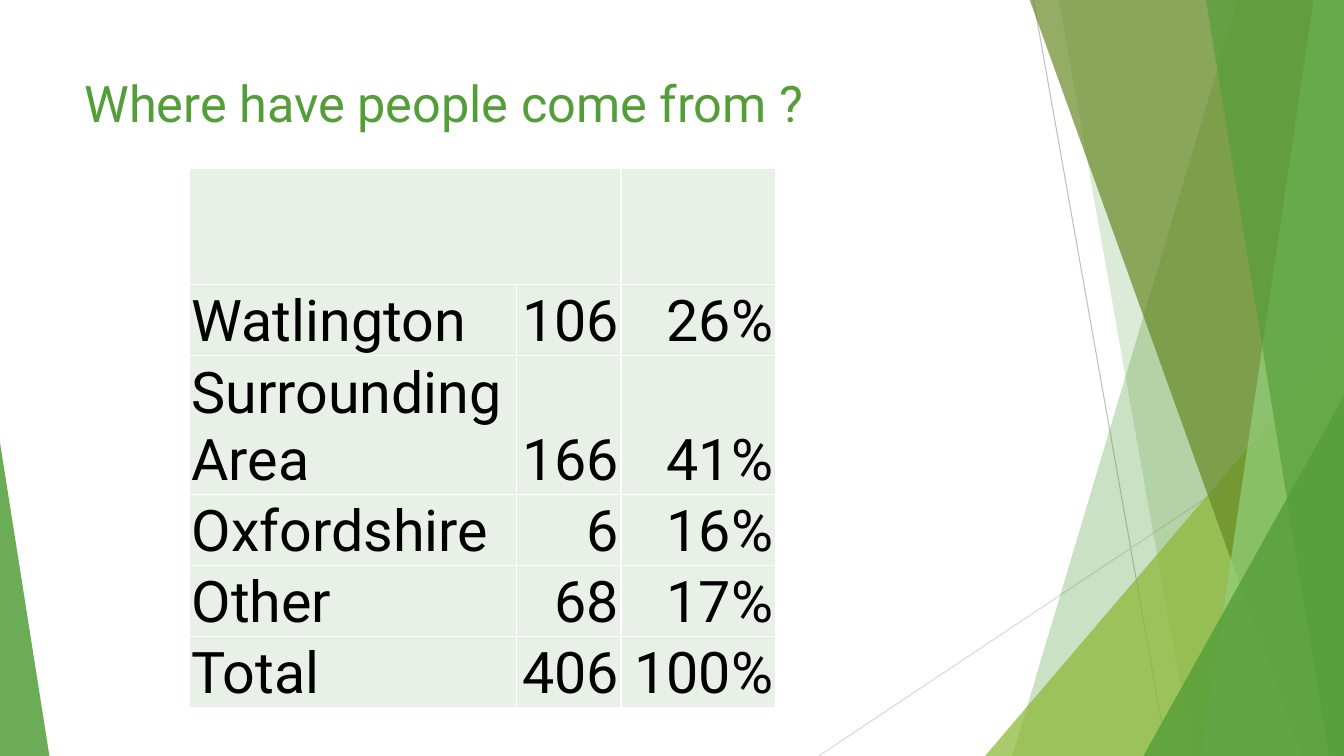
from dataclasses import dataclass

from lxml import etree
from pptx import Presentation
from pptx.dml.color import RGBColor
from pptx.enum.shapes import MSO_CONNECTOR, MSO_SHAPE
from pptx.enum.text import MSO_ANCHOR, PP_ALIGN
from pptx.oxml.ns import qn
from pptx.util import Pt

STRAIGHT = MSO_CONNECTOR.STRAIGHT
TRIANGLE = MSO_SHAPE.ISOSCELES_TRIANGLE
TOP, BOTTOM = MSO_ANCHOR.TOP, MSO_ANCHOR.BOTTOM
LEFT, RIGHT = PP_ALIGN.LEFT, PP_ALIGN.RIGHT

PX = 9144  # EMU in one px, 100 px to the inch
WIDTH, HEIGHT = 1333, 750
FONT = "Roboto"
COLORS = {
    "green": "549E39",
    "lime": "8AB833",
    "olive": "678A26",
    "mint": "93D07D",
    "gray": "BFBFBF",
    "pale gray": "D9D9D9",
    "cell": "E9F0E8",
    "white": "FFFFFF",
    "black": "000000",
}


@dataclass(frozen=True)
class Ray:
    start: tuple[int, int]
    end: tuple[int, int]
    color: str


@dataclass(frozen=True)
class Shard:
    """Band from the top edge to the bottom edge, flush with the right side."""
    top_x: int
    bottom_x: int
    color: str
    opacity: int


@dataclass(frozen=True)
class Wedge:
    """Right triangle standing on the bottom edge, apex 0 left or 1 right."""
    left: int
    top: int
    width: int
    apex: int
    color: str
    opacity: int


RAYS = [
    Ray((1025, 0), (1158, HEIGHT), "gray"),
    Ray((WIDTH, 403), (812, HEIGHT), "pale gray"),
]
FACETS = [
    Shard(1228, 1004, "green", 30),
    Shard(1050, 1183, "green", 20),
    Wedge(977, 333, 356, 1, "lime", 72),
    Shard(1021, 1291, "olive", 70),
    Shard(1303, 1192, "mint", 70),
    Shard(1196, 1318, "green", 65),
    Wedge(1134, 393, 199, 1, "green", 80),
    Wedge(0, 439, 49, 0, "green", 85),
]
COLUMNS = [324, 104, 153]
ROW_HEIGHTS = [115, 69, 137, 69, 69, 69]
ORIGINS = [
    ("Watlington", "106", "26%"),
    ("Surrounding Area", "166", "41%"),
    ("Oxfordshire", "6", "16%"),
    ("Other", "68", "17%"),
    ("Total", "406", "100%"),
]
CELL_FORMAT = {
    "margin_left": 2 * PX,
    "margin_right": 2 * PX,
    "margin_top": 2 * PX,
    "margin_bottom": 0,
    "vertical_anchor": BOTTOM,
}


def rgb(color: str) -> RGBColor:
    return RGBColor.from_string(COLORS[color])


def apply(target, values: dict) -> None:
    for name, value in values.items():
        setattr(target, name, value)


def write(para, text: str, size: int, color: str, align) -> None:
    para.alignment = align
    span = para.add_run()
    span.text = text
    apply(span.font, {"name": FONT, "size": Pt(size)})
    span.font.color.rgb = rgb(color)


def draw_ray(page, ray: Ray) -> None:
    ends = [value * PX for value in ray.start + ray.end]
    line = page.shapes.add_connector(STRAIGHT, *ends)
    line.line.color.rgb = rgb(ray.color)
    line.line.width = Pt(0.75)
    etree.SubElement(line._element.spPr, qn("a:effectLst"))


def draw_facet(page, facet: Shard | Wedge) -> None:
    if isinstance(facet, Shard):
        builder = page.shapes.build_freeform(facet.top_x, -1, scale=PX)
        corners = [(WIDTH, -1), (WIDTH, HEIGHT), (facet.bottom_x, HEIGHT)]
        builder.add_line_segments(corners, close=True)
        shape = builder.convert_to_shape()
    else:
        frame = (facet.left, facet.top, facet.width, HEIGHT - facet.top)
        shape = page.shapes.add_shape(TRIANGLE, *(value * PX for value in frame))
        shape.adjustments[0] = facet.apex
    shape.shadow.inherit = False
    shape.line.fill.background()
    shape.fill.solid()
    shape.fill.fore_color.rgb = rgb(facet.color)
    color = shape._element.spPr.find(qn("a:solidFill"))[0]
    etree.SubElement(color, qn("a:alpha"), val=str(facet.opacity * 1000))


def draw_title(page, text: str) -> None:
    frame = (74, 67, 940, 144)
    box = page.shapes.add_textbox(*(value * PX for value in frame))
    apply(box.text_frame, {"word_wrap": True, "vertical_anchor": TOP})
    write(box.text_frame.paragraphs[0], text, 36, "green", LEFT)


def style_cell(cell) -> None:
    apply(cell, CELL_FORMAT)
    properties = cell._tc.get_or_add_tcPr()
    for side in ("a:lnL", "a:lnR", "a:lnT", "a:lnB"):
        border = etree.SubElement(properties, qn(side), w=str(Pt(1)))
        fill = etree.SubElement(border, qn("a:solidFill"))
        etree.SubElement(fill, qn("a:srgbClr"), val=COLORS["white"])
    cell.fill.solid()
    cell.fill.fore_color.rgb = rgb("cell")


def draw_table(page) -> None:
    frame = (188, 167, sum(COLUMNS), sum(ROW_HEIGHTS))
    table = page.shapes.add_table(
        len(ROW_HEIGHTS), len(COLUMNS), *(value * PX for value in frame)
    ).table
    apply(table, {"first_row": False, "horz_banding": False})
    for column, width in zip(table.columns, COLUMNS):
        column.width = width * PX
    for row, height in zip(table.rows, ROW_HEIGHTS):
        row.height = height * PX
    for cell in table.iter_cells():
        style_cell(cell)
    table.cell(0, 0).merge(table.cell(0, 1))
    for row, values in enumerate(ORIGINS, start=1):
        for column, value in enumerate(values):
            para = table.cell(row, column).text_frame.paragraphs[0]
            write(para, value, 41, "black", RIGHT if column else LEFT)


def main() -> None:
    deck = Presentation()
    apply(deck, {"slide_width": WIDTH * PX, "slide_height": HEIGHT * PX})
    page = deck.slides.add_slide(deck.slide_layouts[6])

    # Faceted backdrop
    for ray in RAYS:
        draw_ray(page, ray)
    for facet in FACETS:
        draw_facet(page, facet)

    # Title and table of origins
    draw_title(page, "Where have people come from ?")
    draw_table(page)

    deck.save("out.pptx")


if __name__ == "__main__":
    main()
